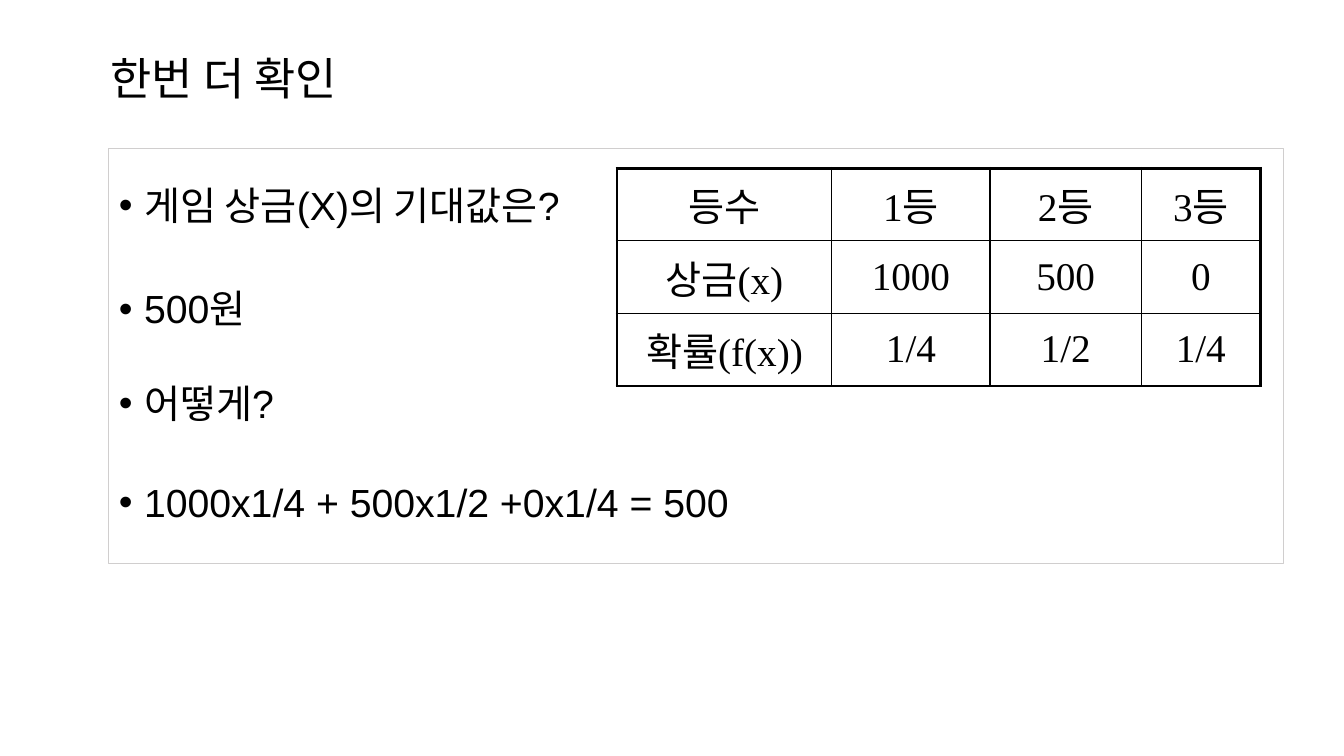
from typing import NamedTuple

from lxml.etree import SubElement
from pptx import Presentation
from pptx.dml.color import RGBColor
from pptx.enum.shapes import MSO_SHAPE
from pptx.enum.text import MSO_ANCHOR, PP_ALIGN
from pptx.oxml.ns import qn
from pptx.util import Inches, Pt

COLORS = {"text": "000000", "frame": "D0CECE", "grid": "000000"}
KOREAN_FONT = "Noto Sans CJK KR"
OUTER_BORDER, INNER_BORDER = 2.25, 1


class Point(NamedTuple):
    text: str
    space_before: float


POINTS = [
    Point("게임 상금(X)의 기대값은?", 0),
    Point("500원", 44),
    Point("어떻게?", 37),
    Point("1000x1/4 + 500x1/2 +0x1/4 = 500", 40.5),
]
PRIZES = [
    ["등수", "1등", "2등", "3등"],
    ["상금(x)", "1000", "500", "0"],
    ["확률(f(x))", "1/4", "1/2", "1/4"],
]
COLUMN_WIDTHS = [2.13, 1.57, 1.5, 1.18]
ROW_HEIGHT = 0.72


def color(name: str) -> RGBColor:
    return RGBColor.from_string(COLORS[name])


def add_run(paragraph, text: str, size: float, font: str) -> None:
    run = paragraph.add_run()
    run.text = text
    run.font.size = Pt(size)
    run.font.name = font
    run.font.color.rgb = color("text")
    SubElement(run.font._element, qn("a:ea"), typeface=KOREAN_FONT)


def add_bullet(paragraph) -> None:
    properties = paragraph._p.get_or_add_pPr()
    properties.set("marL", str(Inches(0.25)))
    properties.set("indent", str(-Inches(0.25)))
    SubElement(properties, qn("a:buFont"), typeface="Arial")
    SubElement(properties, qn("a:buChar"), char="•")


def add_border(cell, side: str, width: float) -> None:
    line = SubElement(cell._tc.get_or_add_tcPr(), qn(f"a:ln{side}"), w=str(Pt(width)))
    fill = SubElement(line, qn("a:solidFill"))
    SubElement(fill, qn("a:srgbClr"), val=COLORS["grid"])


def add_title(slide) -> None:
    title = slide.shapes.add_textbox(Inches(1), Inches(0.33), Inches(2.85), Inches(0.95))
    frame = title.text_frame
    frame.word_wrap = True
    frame.vertical_anchor = MSO_ANCHOR.MIDDLE
    frame.paragraphs[0].line_spacing = 0.9
    add_run(frame.paragraphs[0], "한번 더 확인", 32, KOREAN_FONT)


def add_points(slide) -> None:
    panel = slide.shapes.add_shape(
        MSO_SHAPE.RECTANGLE, Inches(1.08), Inches(1.47), Inches(11.65), Inches(4.12))
    panel.shadow.inherit = False
    panel.fill.background()
    panel.line.color.rgb = color("frame")
    panel.line.width = Pt(0.75)
    frame = panel.text_frame
    frame.word_wrap = True
    frame.vertical_anchor = MSO_ANCHOR.MIDDLE
    for index, point in enumerate(POINTS):
        paragraph = frame.add_paragraph() if index else frame.paragraphs[0]
        paragraph.alignment = PP_ALIGN.LEFT
        paragraph.line_spacing = 0.9
        paragraph.space_before = Pt(point.space_before)
        add_bullet(paragraph)
        add_run(paragraph, point.text, 28, "Arial")


def add_prizes(slide) -> None:
    row_count, column_count = len(PRIZES), len(COLUMN_WIDTHS)
    prizes = slide.shapes.add_table(
        row_count, column_count, Inches(6.12), Inches(1.67),
        Inches(sum(COLUMN_WIDTHS)), Inches(row_count * ROW_HEIGHT)).table
    prizes.first_row = False
    prizes.horz_banding = False
    for column, width in zip(prizes.columns, COLUMN_WIDTHS):
        column.width = Inches(width)
    for r, values in enumerate(PRIZES):
        prizes.rows[r].height = Inches(ROW_HEIGHT)
        for c, value in enumerate(values):
            cell = prizes.cell(r, c)
            cell.vertical_anchor = MSO_ANCHOR.MIDDLE
            on_edge = {"L": c == 0, "R": c == column_count - 1,
                       "T": r == 0, "B": r == row_count - 1}
            for side, outer in on_edge.items():
                add_border(cell, side, OUTER_BORDER if outer else INNER_BORDER)
            cell.fill.background()
            paragraph = cell.text_frame.paragraphs[0]
            paragraph.alignment = PP_ALIGN.CENTER
            add_run(paragraph, value, 28, "Times New Roman")


def main() -> None:
    deck = Presentation()
    deck.slide_width, deck.slide_height = Inches(13.33), Inches(7.5)
    slide = deck.slides.add_slide(deck.slide_layouts[6])
    # Heading
    add_title(slide)
    # Question and its solution
    add_points(slide)
    # Prize distribution
    add_prizes(slide)
    deck.save("out.pptx")


if __name__ == "__main__":
    main()
